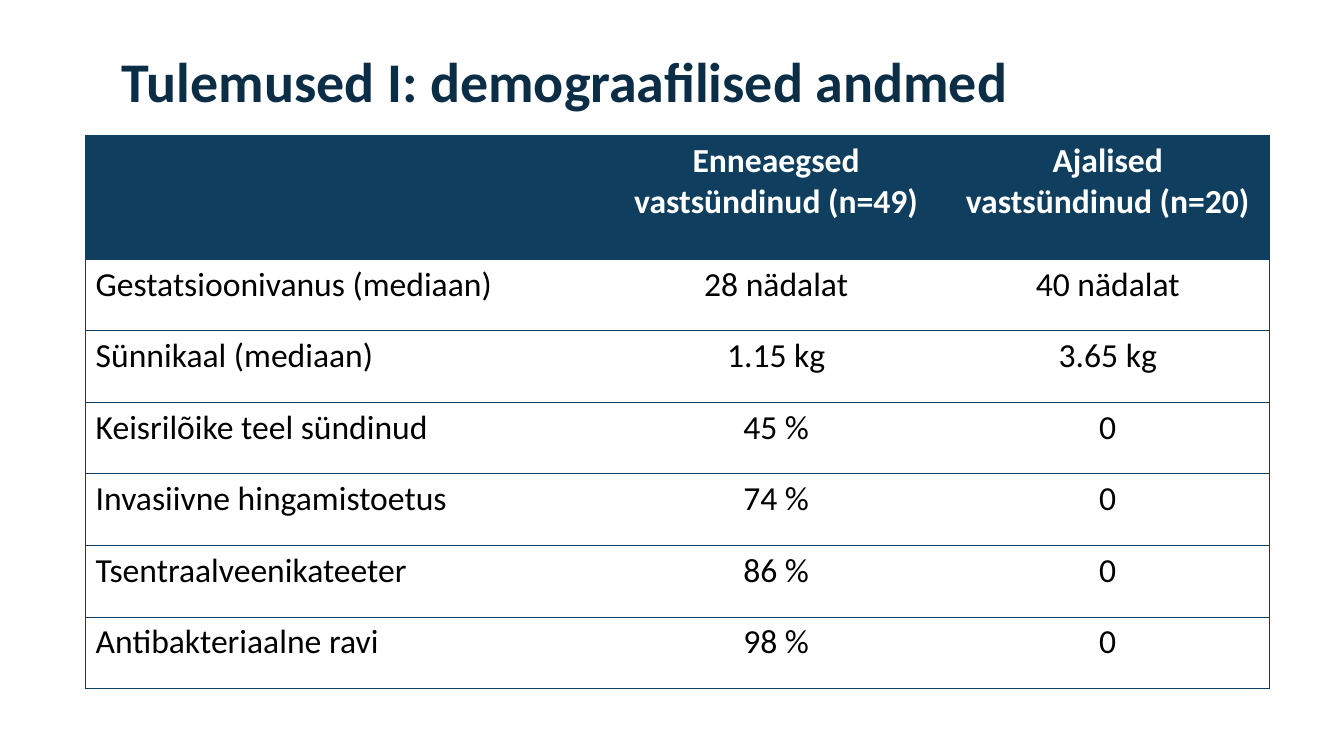
import pptx
import pptx.util
import pptx.dml.color
import pptx.enum.text
import pptx.oxml
import pptx.oxml.ns

RGB = pptx.dml.color.RGBColor
ALIGN = pptx.enum.text.PP_ALIGN
NAVY = RGB(0x0B, 0x2E, 0x46)
BLUE = RGB(0x0F, 0x3E, 0x5E)
WHITE = RGB(0xFF, 0xFF, 0xFF)
BLACK = RGB(0x00, 0x00, 0x00)

WIDTHS = [15.48, 10.14, 9.6]
HEAD, BODY = 4.92, 2.84
DATA = [
    ["", "Enneaegsed vastsündinud (n=49)", "Ajalised vastsündinud (n=20)"],
    ["Gestatsioonivanus (mediaan)", "28 nädalat", "40 nädalat"],
    ["Sünnikaal (mediaan)", "1.15 kg", "3.65 kg"],
    ["Keisrilõike teel sündinud", "45 %", "0"],
    ["Invasiivne hingamistoetus", "74 %", "0"],
    ["Tsentraalveenikateeter", "86 %", "0"],
    ["Antibakteriaalne ravi", "98 %", "0"],
]


class Deck:
    font = "Calibri"
    cols, rows = 40, 30

    def __init__(self):
        self.prs = pptx.Presentation()
        self.prs.slide_width = pptx.util.Inches(13.33)
        self.prs.slide_height = pptx.util.Inches(7.5)
        self.slide = self.prs.slides.add_slide(self.prs.slide_layouts[5])

    def wide(self, n):
        return round(self.prs.slide_width * n / self.cols)

    def high(self, n):
        return round(self.prs.slide_height * n / self.rows)

    def style(self, para, size, color, bold, align):
        para.alignment = align
        para.font.name = self.font
        para.font.size = pptx.util.Pt(size)
        para.font.bold = bold
        para.font.color.rgb = color

    def title(self, text, x, y, w, h):
        box = self.slide.shapes.title
        box.left, box.top = self.wide(x), self.high(y)
        box.width, box.height = self.wide(w), self.high(h)
        box.text_frame.text = text
        box.text_frame.vertical_anchor = pptx.enum.text.MSO_ANCHOR.MIDDLE
        para = box.text_frame.paragraphs[0]
        para.line_spacing = 0.9
        self.style(para, 40, NAVY, True, ALIGN.LEFT)

    def table(self, data, x, y, widths, heights):
        frame = self.slide.shapes.add_table(
            len(data), len(widths), self.wide(x), self.high(y),
            self.wide(sum(widths)), self.high(sum(heights)))
        grid = frame.table
        for col, width in zip(grid.columns, widths):
            col.width = self.wide(width)
        for row, height in zip(grid.rows, heights):
            row.height = self.high(height)
        for r, line in enumerate(data):
            for c, text in enumerate(line):
                sides = {"L": c == 0, "R": c == len(widths) - 1,
                         "T": True, "B": True}
                self.cell(grid.cell(r, c), text, r == 0, c == 0, sides)

    def cell(self, cell, text, head, first, sides):
        cell.text = text
        self.style(cell.text_frame.paragraphs[0], 24,
                   WHITE if head else BLACK, head,
                   ALIGN.LEFT if first else ALIGN.CENTER)
        cell.fill.solid()
        cell.fill.fore_color.rgb = BLUE if head else WHITE
        props = cell._tc.get_or_add_tcPr()
        for i, (side, shown) in enumerate(sides.items()):
            paint = (f'<a:solidFill><a:srgbClr val="{BLUE}"/></a:solidFill>'
                     if shown else "<a:noFill/>")
            props.insert(i, pptx.oxml.parse_xml(
                f'<a:ln{side} {pptx.oxml.ns.nsdecls("a")} '
                f'w="{pptx.util.Pt(0.5)}">{paint}</a:ln{side}>'))


def main():
    deck = Deck()
    deck.title("Tulemused I: demograafilised andmed", 3.33, 0.44, 29.6, 5.8)
    deck.table(DATA, 2.55, 5.36, WIDTHS, [HEAD] + [BODY] * (len(DATA) - 1))
    deck.prs.save("out.pptx")


if __name__ == "__main__":
    main()
